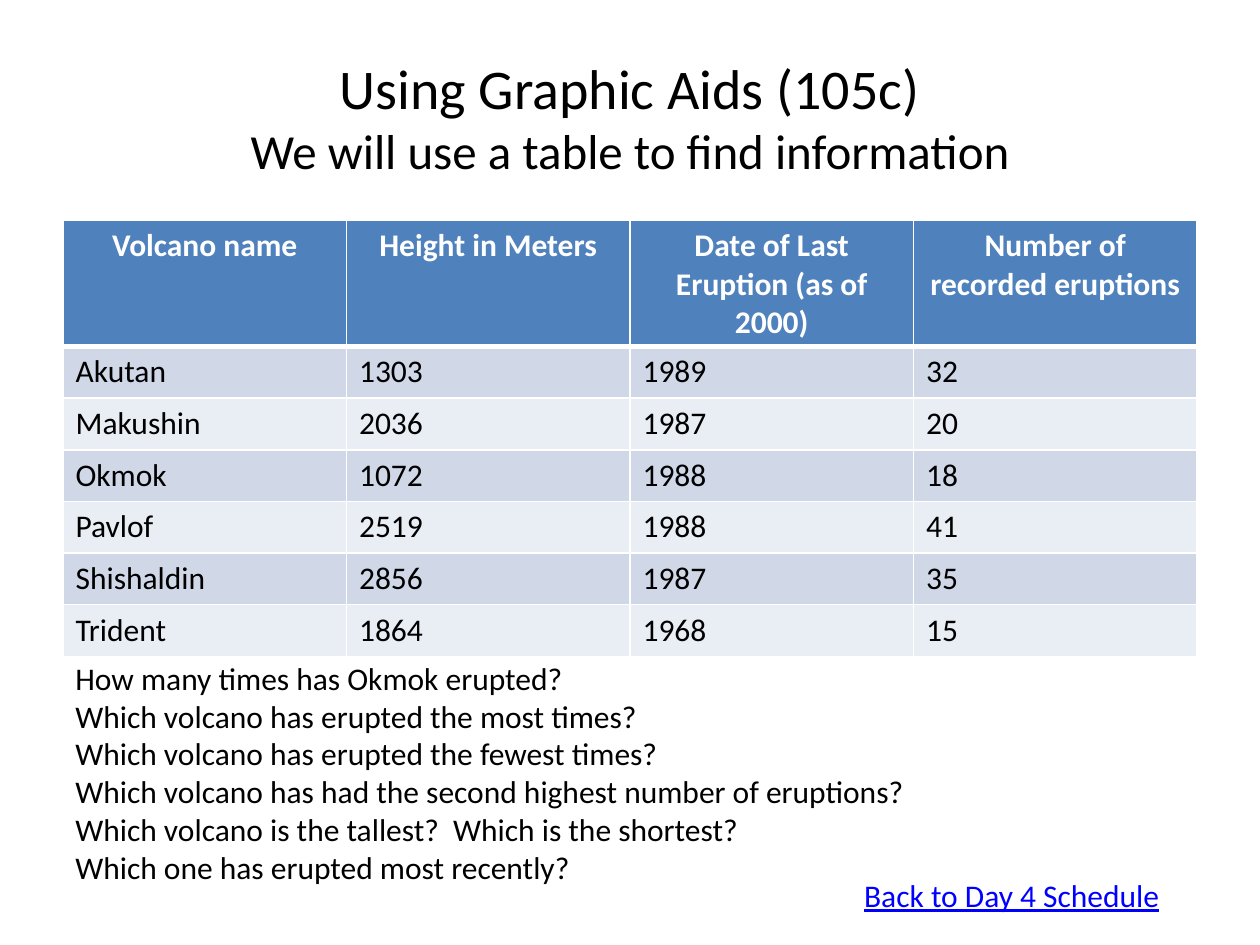
import pptx
import pptx.dml.color
import pptx.enum.text
import pptx.oxml
import pptx.oxml.ns
import pptx.util

Inches = pptx.util.Inches
Pt = pptx.util.Pt
ALIGN = pptx.enum.text.PP_ALIGN
ANCHOR = pptx.enum.text.MSO_ANCHOR

FONT = "Calibri"
COLORS = {
    "text": "000000",
    "link": "0000FF",
    "white": "FFFFFF",
    "header": "4F81BD",
    "odd_row": "D0D8E8",
    "even_row": "E9EDF4",
}
TITLE = [("Using Graphic Aids (105c)", 32), ("We will use a table to find information", 28)]
VOLCANOES = [
    ("Volcano name", "Height in Meters", "Date of Last Eruption (as of 2000)",
     "Number of recorded eruptions"),
    ("Akutan", "1303", "1989", "32"),
    ("Makushin", "2036", "1987", "20"),
    ("Okmok", "1072", "1988", "18"),
    ("Pavlof", "2519", "1988", "41"),
    ("Shishaldin", "2856", "1987", "35"),
    ("Trident", "1864", "1968", "15"),
]
QUESTIONS = [
    "How many times has Okmok erupted?",
    "Which volcano has erupted the most times?",
    "Which volcano has erupted the fewest times?",
    "Which volcano has had the second highest number of eruptions?",
    "Which volcano is the tallest?  Which is the shortest?",
    "Which one has erupted most recently?",
]
LINK = "Back to Day 4 Schedule"
TABLE_LEFT, TABLE_TOP, TABLE_WIDTH = 0.5, 1.75, 9
HEADER_HEIGHT, ROW_HEIGHT = 1, 0.41


def rgb(name):
    return pptx.dml.color.RGBColor.from_string(COLORS[name])


def add_run(paragraph, text, size=18, color="text", bold=False, underline=False):
    run = paragraph.add_run()
    run.text = text
    font = run.font
    font.name, font.size, font.bold = FONT, Pt(size), bold
    font.color.rgb = rgb(color)
    if underline:
        font.underline = True


def add_text_box(slide, left, top, width, height):
    box = slide.shapes.add_textbox(Inches(left), Inches(top), Inches(width), Inches(height))
    box.text_frame.word_wrap = True
    return box.text_frame


def set_borders(cell, **widths):
    """Draw white borders; widths in points are keyed L, R, T, B in schema order."""
    properties = cell._tc.get_or_add_tcPr()
    for side, width in widths.items():
        properties.append(pptx.oxml.parse_xml(
            f'<a:ln{side} {pptx.oxml.ns.nsdecls("a")} w="{Pt(width)}"><a:solidFill>'
            f'<a:srgbClr val="{COLORS["white"]}"/></a:solidFill></a:ln{side}>'))


def add_title(slide):
    frame = add_text_box(slide, 0.5, 0.3, 9, 1.25)
    frame.vertical_anchor = ANCHOR.MIDDLE
    paragraph = frame.paragraphs[0]
    paragraph.alignment = ALIGN.CENTER
    for index, (text, size) in enumerate(TITLE):
        if index:
            paragraph.add_line_break()
        add_run(paragraph, text, size)


def add_volcano_table(slide):
    row_count, column_count = len(VOLCANOES), len(VOLCANOES[0])
    height = HEADER_HEIGHT + ROW_HEIGHT * (row_count - 1)
    table = slide.shapes.add_table(
        row_count, column_count, Inches(TABLE_LEFT), Inches(TABLE_TOP),
        Inches(TABLE_WIDTH), Inches(height)).table
    for column in table.columns:
        column.width = Inches(TABLE_WIDTH / column_count)
    for row_index, values in enumerate(VOLCANOES):
        header = row_index == 0
        table.rows[row_index].height = Inches(HEADER_HEIGHT if header else ROW_HEIGHT)
        fill = "header" if header else "odd_row" if row_index % 2 else "even_row"
        for column_index, value in enumerate(values):
            cell = table.cell(row_index, column_index)
            set_borders(cell, L=1, R=1, T=3 if row_index == 1 else 1, B=3 if header else 1)
            cell.fill.solid()
            cell.fill.fore_color.rgb = rgb(fill)
            paragraph = cell.text_frame.paragraphs[0]
            paragraph.alignment = ALIGN.CENTER if header else ALIGN.LEFT
            add_run(paragraph, value, color="white" if header else "text", bold=header)


def add_questions(slide):
    frame = add_text_box(slide, 0.5, 5.18, 7.46, 1.92)
    for index, question in enumerate(QUESTIONS):
        paragraph = frame.add_paragraph() if index else frame.paragraphs[0]
        add_run(paragraph, question)


def main():
    presentation = pptx.Presentation()
    presentation.slide_width, presentation.slide_height = Inches(10), Inches(7.5)
    slide = presentation.slides.add_slide(presentation.slide_layouts[6])
    add_title(slide)
    add_volcano_table(slide)
    add_questions(slide)
    link_frame = add_text_box(slide, 6.76, 6.9, 2.9, 0.4)
    add_run(link_frame.paragraphs[0], LINK, color="link", underline=True)
    presentation.save("out.pptx")


if __name__ == "__main__":
    main()
